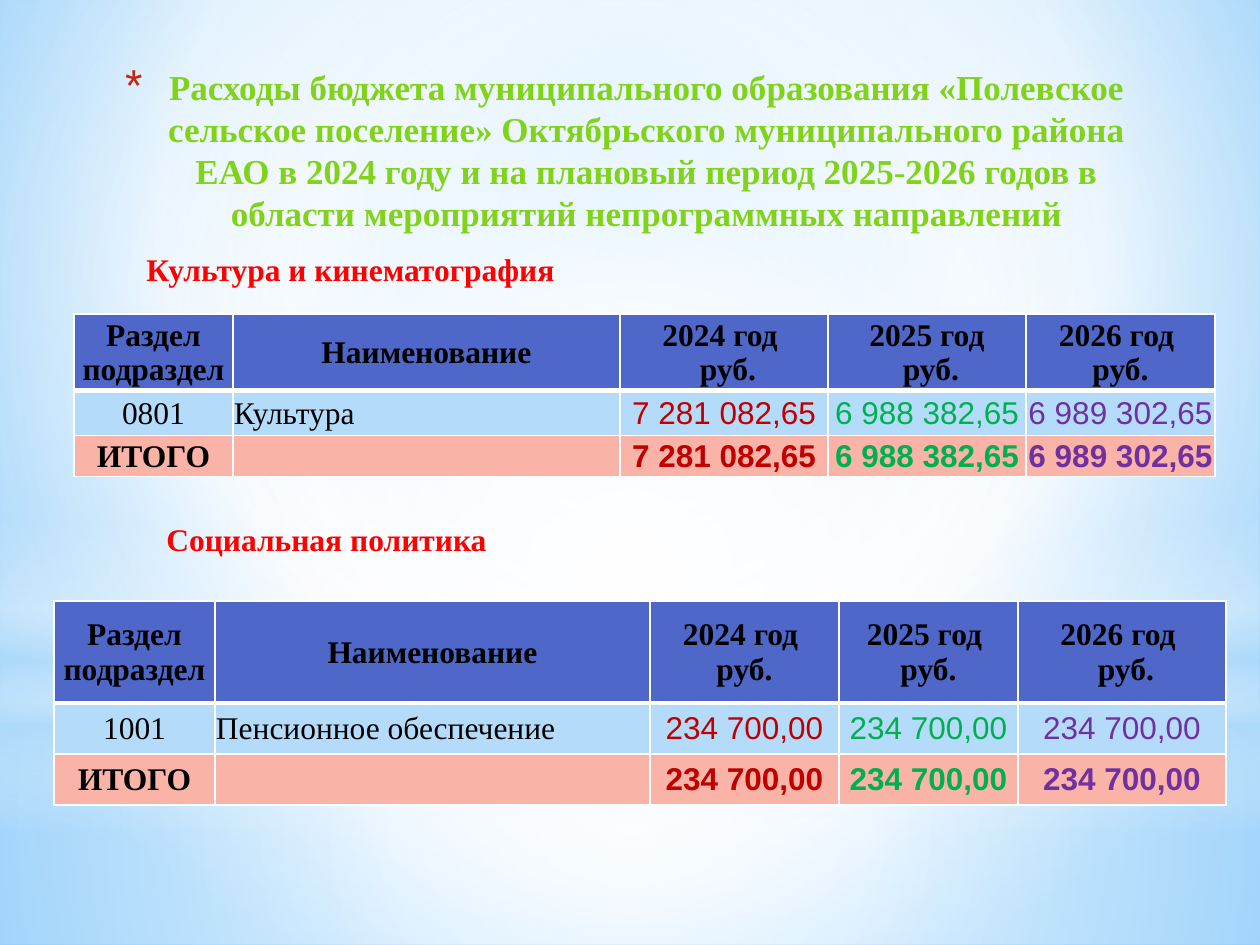
from pptx import Presentation, util as u
from pptx.dml.color import RGBColor
from pptx.enum import shapes, text
from pptx.oxml import parse_xml, ns

SERIF, SANS = "Times New Roman", "Arial"
WHITE, BLACK, RED, LIME = "FFFFFF", "000000", "FF0000", "81D31A"
PALE = "B4DCFA"
BANDS = ["4E67C8", PALE, "F9B3A7"]
YEARS = ["C00000", "00B050", "7030A0"]
NS = ns.nsdecls("a")
CENTRE = (50, 50, 50, 50)
MID = text.PP_ALIGN.CENTER
LEFT = text.PP_ALIGN.LEFT


def px(n):
    """Turn pixels into EMU."""
    return u.Emu(round(n * 914400 / 126))


def rgb(code):
    """Turn a hex string into a colour."""
    return RGBColor.from_string(code)


class Deck:
    """Hold the style and the current slide."""

    def __init__(self, wide, high):
        """Start a deck with one blank slide."""
        self.prs = Presentation()
        self.prs.slide_width, self.prs.slide_height = px(wide), px(high)
        self.slide = self.prs.slides.add_slide(self.prs.slide_layouts[6])

    def blend(self, root, fill, stops, to=None):
        """Fill with a round gradient, or a downward one without a focus."""
        fill.gradient()
        old = root.xpath(".//a:gradFill")[0]
        marks = "".join(
            f'<a:gs pos="{pos * 1000}"><a:srgbClr val="{code}">'
            f'<a:alpha val="{alpha * 1000}"/></a:srgbClr></a:gs>'
            for pos, code, alpha in stops)
        if to:
            sides = " ".join(f'{k}="{v * 1000}"' for k, v in zip("ltrb", to))
            way = f'<a:path path="circle"><a:fillToRect {sides}/></a:path>'
        else:
            way = '<a:lin ang="5400000" scaled="0"/>'
        new = parse_xml(f'<a:gradFill {NS} rotWithShape="1">'
                        f'<a:gsLst>{marks}</a:gsLst>{way}</a:gradFill>')
        old.getparent().replace(old, new)

    def back(self, stops, to):
        """Fill the background."""
        self.blend(self.slide.element, self.slide.background.fill, stops, to)

    def glow(self, kind, box, stops, to=None):
        """Add a shape with a soft gradient."""
        shape = self.slide.shapes.add_shape(kind, *map(px, box))
        shape.shadow.inherit = False
        shape.line.fill.background()
        self.blend(shape.element, shape.fill, stops, to)

    def style(self, frame, words, size, color, font=SERIF, bold=True, align=LEFT):
        """Set text and format its runs."""
        frame.text = words
        for para in frame.paragraphs:
            para.alignment = align
            for run in para.runs:
                run.font.size, run.font.name = u.Pt(size), font
                run.font.bold = bold
                run.font.color.rgb = rgb(color)

    def label(self, box, words, size, color, wrap=True, align=LEFT):
        """Add a text box and return its frame."""
        frame = self.slide.shapes.add_textbox(*map(px, box)).text_frame
        frame.word_wrap = wrap
        self.style(frame, words, size, color, align=align)
        return frame

    def title(self, box, words):
        """Add the heading with its star bullet."""
        para = self.label(box, words, 20, LIME, align=MID).paragraphs[0]
        para.line_spacing = u.Pt(24)
        props = para._p.get_or_add_pPr()
        props.set("marL", str(px(44)))
        props.set("indent", str(px(-44)))
        for part in ('buClr {}><a:srgbClr val="C3260C"/></a:buClr>',
                     'buSzPct {} val="128000"/>',
                     'buFont {} typeface="Arial"/>',
                     'buChar {} char="*"/>'):
            props.append(parse_xml("<a:" + part.format(NS)))

    def edge(self, cell, top, bottom):
        """Draw the white borders of a cell."""
        props = cell._tc.get_or_add_tcPr()
        for side, width in zip("LRTB", (1, 1, top, bottom)):
            props.append(parse_xml(
                f'<a:ln{side} {NS} w="{u.Pt(width)}"><a:solidFill>'
                f'<a:srgbClr val="{WHITE}"/></a:solidFill></a:ln{side}>'))

    def table(self, left, top, cols, rows, cells):
        """Add a budget table: header, one line and a total."""
        box = map(px, (left, top, sum(cols), sum(rows)))
        grid = self.slide.shapes.add_table(len(rows), len(cols), *box).table
        for col, width in zip(grid.columns, cols):
            col.width = px(width)
        for r, line in enumerate(cells):
            grid.rows[r].height = px(rows[r])
            for c, words in enumerate(line):
                cell = grid.cell(r, c)
                self.edge(cell, 3 if r == 1 else 1, 3 if r == 0 else 1)
                cell.fill.solid()
                cell.fill.fore_color.rgb = rgb(BANDS[r])
                cell.margin_left = cell.margin_right = cell.margin_top = px(1)
                cell.margin_bottom = 0
                cell.vertical_anchor = text.MSO_ANCHOR.MIDDLE
                money = r > 0 and c > 1
                self.style(cell.text_frame, words, 18,
                           YEARS[c - 2] if money else BLACK,
                           SANS if money else SERIF, r != 1,
                           LEFT if (r, c) == (1, 1) else MID)


def main():
    """Build the slide."""
    deck = Deck(1260, 945)
    rect, oval = shapes.MSO_SHAPE.RECTANGLE, shapes.MSO_SHAPE.OVAL
    deck.back([(0, "9ED5FF", 100), (60, WHITE, 100), (100, "5BB9FF", 100)],
              (20, 10, 20, 60))
    deck.glow(rect, (0, 703, 1260, 242),
              [(0, WHITE, 91), (37, WHITE, 76), (100, PALE, 79)], CENTRE)
    deck.glow(rect, (0, 0, 1260, 703),
              [(0, WHITE, 89), (48, WHITE, 62), (100, PALE, 79)], CENTRE)
    deck.glow(rect, (0, 519, 1260, 315),
              [(0, WHITE, 0), (29, WHITE, 30), (45, PALE, 40),
               (55, WHITE, 26), (65, PALE, 60), (100, WHITE, 0)])
    deck.glow(oval, (0, 221, 1260, 703),
              [(0, WHITE, 100), (56, WHITE, 0)], CENTRE)

    deck.label((134, 244, 437, 50), "Культура и кинематография", 18, RED, False)
    deck.label((154, 514, 665, 50), "Социальная политика", 18, RED)
    deck.title((74, 59, 1101, 175),
               "Расходы бюджета муниципального образования «Полевское сельское "
               "поселение» Октябрьского муниципального района ЕАО в 2024 году и на "
               "плановый период 2025-2026 годов в области мероприятий "
               "непрограммных направлений")

    head = ["Раздел подраздел", "Наименование"]
    sums = ["7 281 082,65", "6 988 382,65", "6 989 302,65"]
    deck.table(74, 314, [159, 387, 208, 198, 189], [70, 45, 41], [
        head + ["2024 год \n руб.", "2025 год\n руб.", "2026 год \nруб."],
        ["0801", "Культура"] + sums,
        ["ИТОГО", ""] + sums])
    sums = ["234 700,00"] * 3
    deck.table(54, 601, [161, 435, 189, 179, 208], [102, 51, 51], [
        head + ["2024 год \nруб.", "2025 год \nруб.", "2026 год \n руб."],
        ["1001", "Пенсионное обеспечение"] + sums,
        ["ИТОГО", ""] + sums])
    deck.prs.save("out.pptx")


if __name__ == "__main__":
    main()
